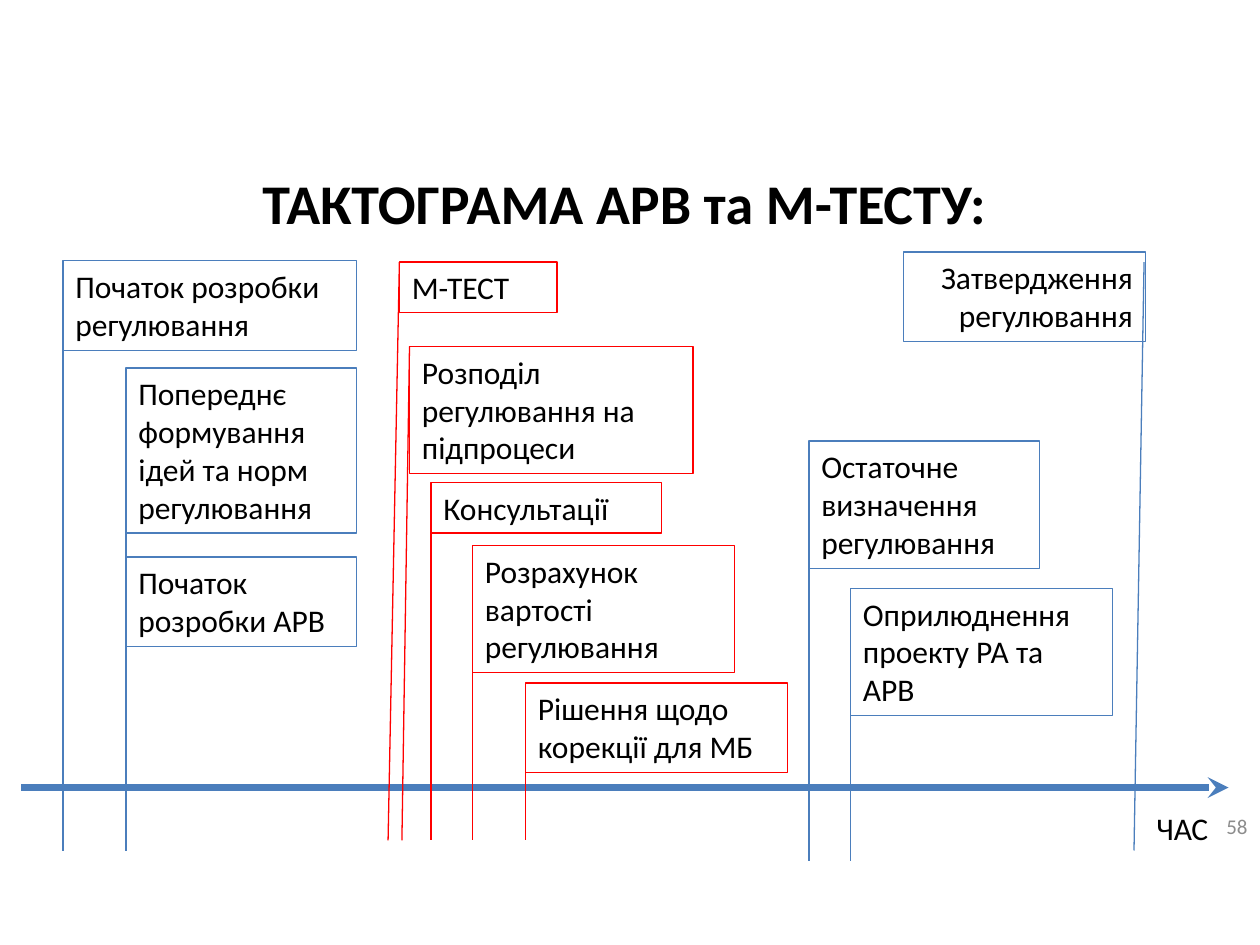
from pptx import Presentation
from pptx.dml.color import RGBColor
from pptx.enum.shapes import MSO_CONNECTOR as Conn, MSO_SHAPE as Kind
from pptx.enum.text import MSO_ANCHOR as Anchor, PP_ALIGN as Align
from pptx.oxml.ns import qn
from pptx.util import Inches, Pt
from lxml.etree import SubElement

BLUE = RGBColor(0x4B, 0x7E, 0xBC)
RED = RGBColor(0xFF, 0x00, 0x00)
BLACK = RGBColor(0x00, 0x00, 0x00)
GREY = RGBColor(0x8C, 0x8C, 0x8C)

STAGES = [
    ("Початок розробки регулювання", (0.5, 2.07, 2.33, 0.71), BLUE),
    ("Попереднє формування ідей та норм регулювання", (1, 2.92, 1.83, 1.31), BLUE),
    ("Початок розробки АРВ", (1, 4.42, 1.83, 0.71), BLUE),
    ("М-ТЕСТ", (3.17, 2.08, 1.25, 0.4), RED),
    ("Розподіл регулювання на підпроцеси", (3.25, 2.75, 2.25, 1.01), RED),
    ("Консультації", (3.42, 3.83, 1.83, 0.4), RED),
    ("Розрахунок вартості регулювання", (3.75, 4.33, 2.08, 1.01), RED),
    ("Рішення щодо корекції для МБ", (4.17, 5.42, 2.08, 0.71), RED),
    ("Оприлюднення проекту РА та АРВ", (6.75, 4.67, 2.08, 1.01), BLUE),
    ("Остаточне визначення регулювання", (6.42, 3.5, 1.83, 1.01), BLUE),
]

DROPS = [
    (0.5, 2.08, 0.5, 6.75, BLUE),
    (1, 3.08, 1, 6.75, BLUE),
    (3.17, 2.08, 3.08, 6.67, RED),
    (3.25, 2.75, 3.19, 6.67, RED),
    (3.42, 3.92, 3.42, 6.67, RED),
    (3.75, 4.58, 3.75, 6.67, RED),
    (4.17, 5.5, 4.17, 6.67, RED),
    (6.75, 4.67, 6.75, 6.83, BLUE),
    (6.42, 3.5, 6.42, 6.83, BLUE),
    (9.08, 2.08, 9, 6.75, BLUE),
]


def write(shape, text, size=18, color=BLACK, align=Align.LEFT, anchor=Anchor.TOP, bold=False):
    frame = shape.text_frame
    frame.word_wrap = True
    frame.vertical_anchor = anchor
    frame.text = text
    para = frame.paragraphs[0]
    para.alignment = align
    font = para.font
    font.name = "Calibri"
    font.size = Pt(size)
    font.bold = bold
    font.color.rgb = color


def add_line(slide, x1, y1, x2, y2, color, width=0.75):
    line = slide.shapes.add_connector(Conn.STRAIGHT, *map(Inches, (x1, y1, x2, y2)))
    line.line.color.rgb = color
    line.line.width = Pt(width)
    SubElement(line._element.spPr, qn("a:effectLst"))
    return line


def add_note(slide, box, text, **style):
    write(slide.shapes.add_textbox(*map(Inches, box)), text, **style)


def add_title(slide, box, text):
    title = slide.shapes.title
    title.left, title.top, title.width, title.height = map(Inches, box)
    write(title, text, size=32, align=Align.CENTER, bold=True)


def add_axis(slide, box):
    left, top, width, height = box
    axis = add_line(slide, left, top, left + width, top + height, BLUE, 4)
    SubElement(axis.line._get_or_add_ln(), qn("a:tailEnd"), type="stealth")
    add_note(slide, (left + 8.91, top + 0.12, 0.92, 0.4), "ЧАС")


def add_stage(slide, box, text, color, align=Align.LEFT):
    stage = slide.shapes.add_shape(Kind.RECTANGLE, *map(Inches, box))
    stage.shadow.inherit = False
    stage.fill.background()
    stage.line.color.rgb = color
    stage.line.width = Pt(0.75)
    write(stage, text, align=align)


def main():
    deck = Presentation()
    deck.slide_width, deck.slide_height = Inches(10), Inches(7.5)
    slide = deck.slides.add_slide(deck.slide_layouts[5])
    add_note(slide, (9.33, 6.27, 0.67, 0.57), "58", size=12, color=GREY,
             align=Align.RIGHT, anchor=Anchor.MIDDLE)
    add_title(slide, (1.58, 1.29, 6.75, 0.64), "ТАКТОГРАМА АРВ та М-ТЕСТУ:")
    add_axis(slide, (0.17, 6.25, 9.58, 0))
    for drop in DROPS:
        add_line(slide, *drop)
    for text, box, color in STAGES:
        add_stage(slide, box, text, color)
    add_stage(slide, (7.17, 2, 1.92, 0.71), "Затвердження регулювання", BLUE, Align.RIGHT)
    deck.save("out.pptx")


if __name__ == "__main__":
    main()
